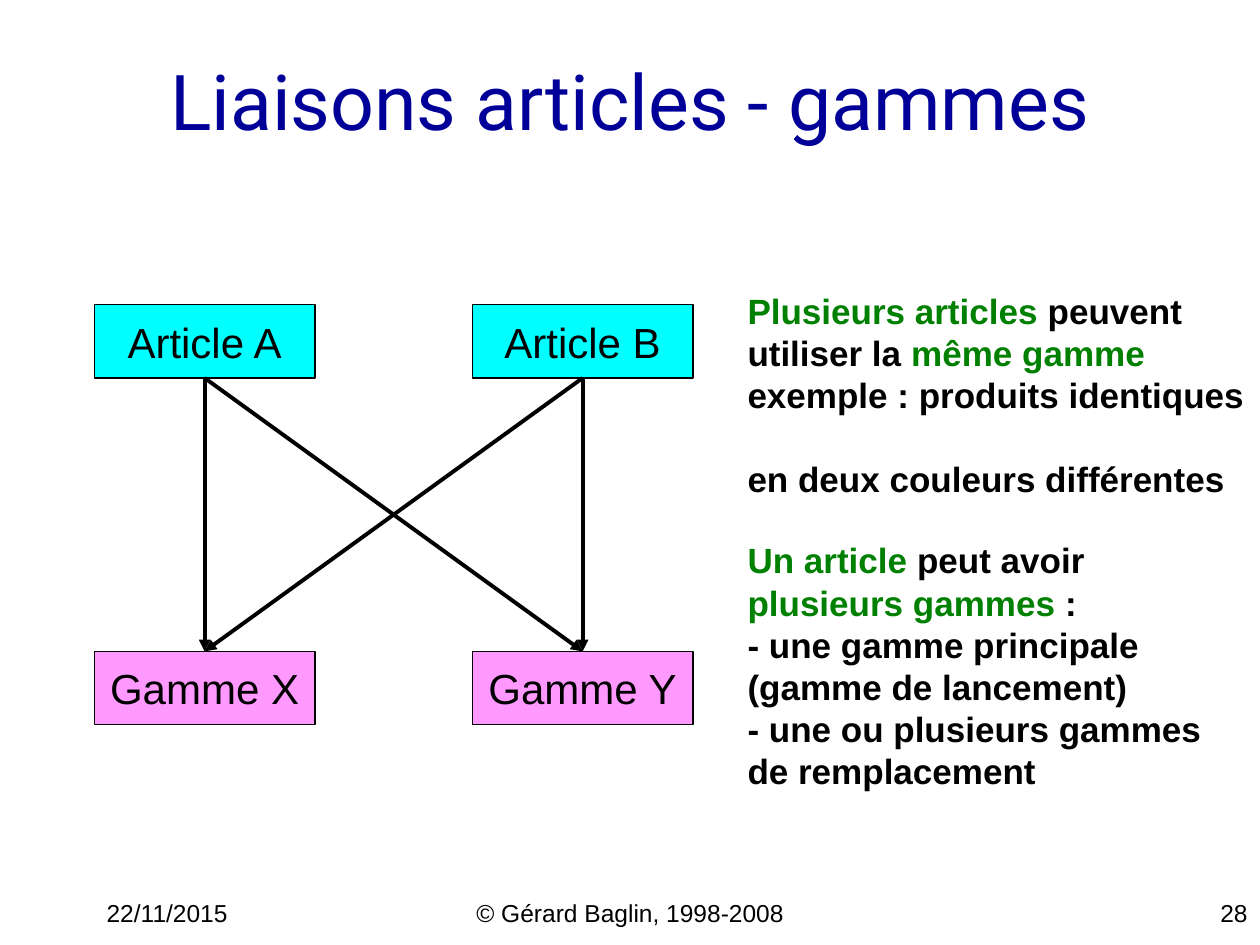
from lxml import etree
from pptx import Presentation
from pptx.dml.color import RGBColor
from pptx.enum.shapes import MSO_CONNECTOR, MSO_SHAPE
from pptx.enum.text import MSO_ANCHOR, MSO_AUTO_SIZE, PP_ALIGN
from pptx.oxml.ns import qn
from pptx.util import Cm, Pt

LEFT, CENTER, RIGHT = PP_ALIGN.LEFT, PP_ALIGN.CENTER, PP_ALIGN.RIGHT
TOP, MIDDLE = MSO_ANCHOR.TOP, MSO_ANCHOR.MIDDLE
RECTANGLE, STRAIGHT = MSO_SHAPE.RECTANGLE, MSO_CONNECTOR.STRAIGHT
GROW = MSO_AUTO_SIZE.SHAPE_TO_FIT_TEXT
TOP_SITE, BOTTOM_SITE = 0, 2

BLACK, BLUE, GREEN = "000000", "000099", "008000"
CYAN, PINK = "00FFFF", "FF99FF"

# Box grid, in cm
GRID_LEFT, GRID_TOP = 1.9, 6.14
COLUMN_STEP, ROW_STEP = 7.62, 6.99
BOX_WIDTH, BOX_HEIGHT = 4.45, 1.48


def rgb(color):
    return RGBColor.from_string(color)


def add_run(paragraph, text, size, color=BLACK, font="Arial", bold=False):
    run = paragraph.add_run()
    run.text = text
    run.font.size = Pt(size)
    run.font.name = font
    run.font.bold = bold
    run.font.color.rgb = rgb(color)


def add_text_frame(slide, left, top, width, height, anchor=TOP):
    frame = slide.shapes.add_textbox(
        Cm(left), Cm(top), Cm(width), Cm(height)).text_frame
    frame.word_wrap = True
    frame.vertical_anchor = anchor
    return frame


def add_label(slide, area, text, size, align, anchor=TOP, **style):
    paragraph = add_text_frame(slide, *area, anchor).paragraphs[0]
    paragraph.alignment = align
    add_run(paragraph, text, size, **style)


def add_box(slide, column, row, text, fill):
    box = slide.shapes.add_shape(
        RECTANGLE,
        Cm(GRID_LEFT + column * COLUMN_STEP), Cm(GRID_TOP + row * ROW_STEP),
        Cm(BOX_WIDTH), Cm(BOX_HEIGHT))
    box.shadow.inherit = False
    box.fill.solid()
    box.fill.fore_color.rgb = rgb(fill)
    box.line.color.rgb = rgb(BLACK)
    box.line.width = Pt(0.75)
    frame = box.text_frame
    frame.word_wrap = False
    frame.vertical_anchor = MIDDLE
    frame.paragraphs[0].alignment = CENTER
    add_run(frame.paragraphs[0], text, 24)
    return box


def add_arrow(slide, article, routing):
    arrow = slide.shapes.add_connector(STRAIGHT, 0, 0, 0, 0)
    arrow.begin_connect(article, BOTTOM_SITE)
    arrow.end_connect(routing, TOP_SITE)
    arrow.line.color.rgb = rgb(BLACK)
    arrow.line.width = Pt(2.25)
    etree.SubElement(arrow.line._get_or_add_ln(), qn("a:tailEnd"),
                     type="triangle")
    etree.SubElement(arrow._element.spPr, qn("a:effectLst"))


def add_comment(slide, area, paragraphs):
    """Each paragraph is (space before in points, lines of (text, color))."""
    frame = add_text_frame(slide, *area, MIDDLE)
    frame.auto_size = GROW
    for index, (space, lines) in enumerate(paragraphs):
        paragraph = frame.add_paragraph() if index else frame.paragraphs[0]
        paragraph.alignment = LEFT
        paragraph.space_before = Pt(space)
        for number, line in enumerate(lines):
            if number:
                paragraph.add_line_break()
            for text, color in line:
                add_run(paragraph, text, 20, color, bold=True)


def main():
    prs = Presentation()
    prs.slide_width, prs.slide_height = Cm(25.4), Cm(19.05)
    slide = prs.slides.add_slide(prs.slide_layouts[6])

    # Footer
    add_label(slide, (1.9, 17.98, 5.3, 0.64), "22/11/2015", 14, LEFT)
    add_label(slide, (8.68, 17.98, 8.05, 0.64),
              "© Gérard Baglin, 1998-2008", 14, CENTER)
    add_label(slide, (20.1, 17.98, 5.3, 0.64), "28", 14, RIGHT)

    # Title
    add_label(slide, (0.64, 0.42, 21.59, 3.18), "Liaisons articles - gammes",
              44, RIGHT, MIDDLE, color=BLUE, font="Roboto")

    # Articles, routings and the links between them
    articles = [add_box(slide, column, 0, f"Article {letter}", CYAN)
                for column, letter in enumerate("AB")]
    routings = [add_box(slide, column, 1, f"Gamme {letter}", PINK)
                for column, letter in enumerate("XY")]
    for routing in routings:
        for article in articles:
            add_arrow(slide, article, routing)

    # Comments
    add_comment(slide, (14.82, 6.14, 10.69, 3.64), [
        (0, [[("Plusieurs articles", GREEN), (" peuvent", BLACK)],
             [("utiliser la ", BLACK), ("même gamme", GREEN)]]),
        (0, [[("exemple : produits identiques", BLACK)]]),
        (24, [[("en deux couleurs différentes", BLACK)]]),
    ])
    add_comment(slide, (14.82, 10.74, 9.95, 5.33), [
        (0, [[("Un article", GREEN), (" peut avoir ", BLACK),
              ("plusieurs gammes", GREEN), (" :", BLACK)],
             [("- une gamme principale (gamme de lancement)", BLACK)]]),
        (0, [[("- une ou plusieurs gammes de remplacement", BLACK)]]),
    ])

    prs.save("out.pptx")


if __name__ == "__main__":
    main()
